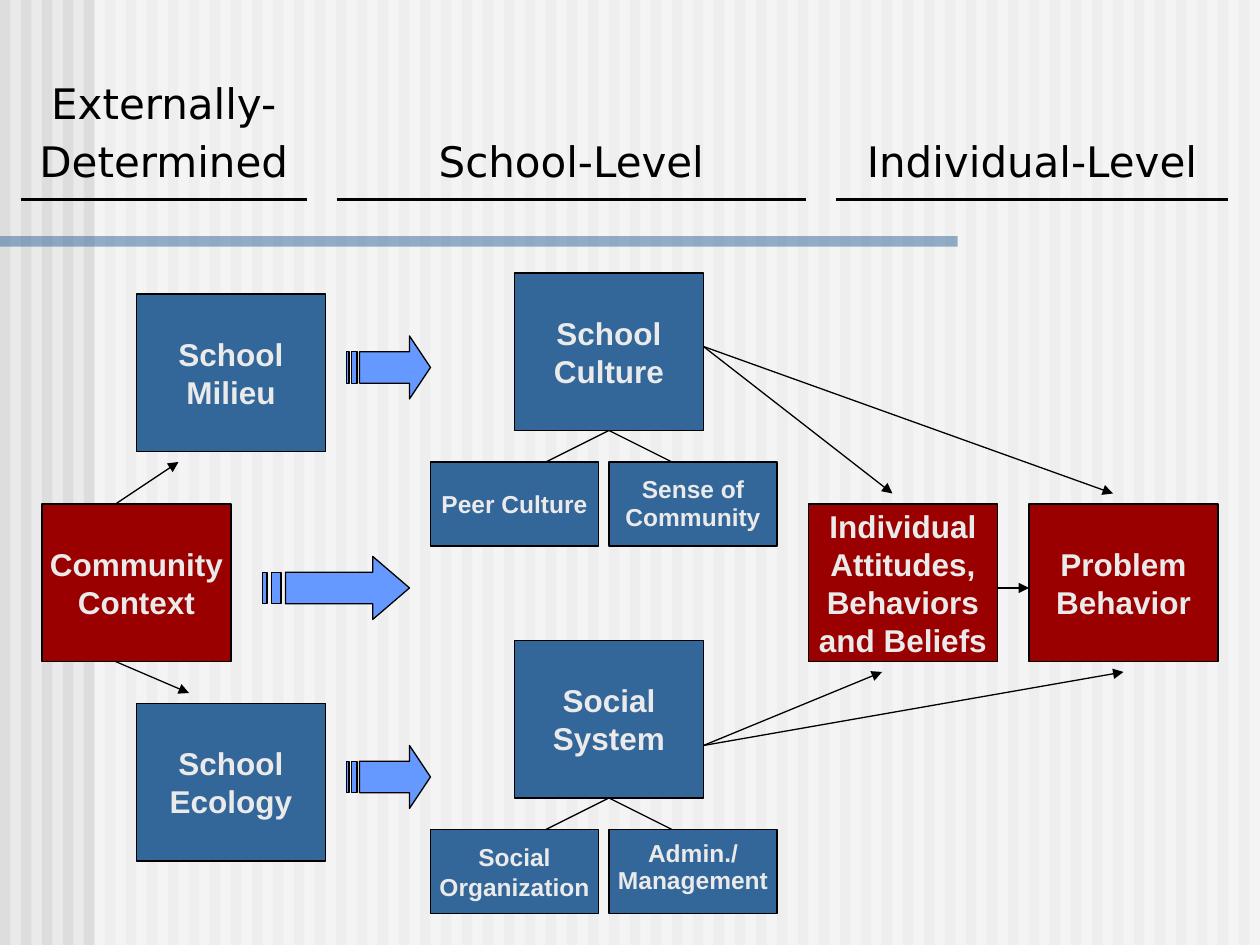
"""Build the school context model slide."""
from lxml import etree
from pptx import Presentation
from pptx import util as u
from pptx.dml.color import RGBColor
from pptx.enum import shapes, text
from pptx.oxml.ns import qn

PX = 7620
COLORS = {
    "background": "EAEAEA", "stripe": "DDDDDD", "veil": "FFFFFF", "blue": "336699",
    "red": "9A0000", "arrow": "6699FF", "line": "000000", "label": "EAEAEA",
}
PLAIN_TABLE = "{2D5ABB26-0587-4C30-8999-92F81FD0307C}"


class Board:
    """Hold the style and the current slide, and draw each kind of element."""

    def __init__(self, slide):
        self.slide = slide
        self.shapes = slide.shapes
        self.font = "Arial"
        self.heading_font = "DejaVu Sans"
        self.width = u.Pt(0.75)
        self.inset = 6 * PX

    def color(self, name):
        return RGBColor.from_string(COLORS[name])

    def background(self, name):
        fill = self.slide.background.fill
        fill.solid()
        fill.fore_color.rgb = self.color(name)

    def paint(self, sp, name, outlined=True):
        sp.shadow.inherit = False
        sp.fill.solid()
        sp.fill.fore_color.rgb = self.color(name)
        if outlined:
            sp.line.color.rgb = self.color("line")
            sp.line.width = self.width
        else:
            sp.line.fill.background()

    def band(self, x, y, w, h, name, alpha=100):
        sp = self.shapes.add_shape(shapes.MSO_SHAPE.RECTANGLE, x * PX, y * PX, w * PX, h * PX)
        self.paint(sp, name, outlined=False)
        if alpha < 100:
            rgb = sp._element.spPr.find(qn("a:solidFill")).find(qn("a:srgbClr"))
            etree.SubElement(rgb, qn("a:alpha"), val=str(alpha * 1000))
        return sp

    def label(self, tf, words, size, font, color, bold=False, before=0, spacing=None):
        tf.text = words
        for p in tf.paragraphs:
            p.alignment = text.PP_ALIGN.CENTER
            p.space_before = u.Pt(before)
            if spacing:
                p.line_spacing = spacing
            for r in p.runs:
                r.font.size = u.Pt(size)
                r.font.name = font
                r.font.bold = bold
                r.font.color.rgb = self.color(color)

    def box(self, words, x, y, w=180, h=150, name="blue", size=18, before=0, spacing=None):
        sp = self.shapes.add_shape(shapes.MSO_SHAPE.RECTANGLE, x * PX, y * PX, w * PX, h * PX)
        self.paint(sp, name)
        tf = sp.text_frame
        tf.word_wrap = True
        tf.vertical_anchor = text.MSO_ANCHOR.MIDDLE
        tf.margin_left = tf.margin_right = tf.margin_top = tf.margin_bottom = self.inset
        self.label(tf, words, size, self.font, "label", True, before, spacing)
        return sp

    def small_box(self, words, x, y, **style):
        return self.box(words, x, y, 160, 80, size=14, **style)

    def line(self, start, end, arrow=True, source=None):
        sp = self.shapes.add_connector(
            shapes.MSO_CONNECTOR.STRAIGHT, *(v * PX for v in (*start, *end)))
        if source is not None:
            sp.begin_connect(source, 2)
        sp.line.color.rgb = self.color("line")
        sp.line.width = self.width
        if arrow:
            ln = sp._element.spPr.find(qn("a:ln"))
            etree.SubElement(ln, qn("a:tailEnd"), type="triangle")
        etree.SubElement(sp._element.spPr, qn("a:effectLst"))

    def striped_arrow(self, x, y, w, h=60):
        def across(part):
            return round((x + w * part / 32) * PX)

        top, upper, middle, lower, bottom = (round((y + h * k / 4) * PX) for k in range(5))
        neck, tip, tail = across(24), across(32), across(5)
        outlines = [[(neck, top), (neck, upper), (tail, upper), (tail, lower),
                     (neck, lower), (neck, bottom), (tip, middle)]]
        for left, right in ((2, 4), (0, 1)):
            a, b = across(left), across(right)
            outlines.append([(a, upper), (a, lower), (b, lower), (b, upper)])
        builder = self.shapes.build_freeform(*outlines[0][0], scale=1.0)
        for i, points in enumerate(outlines):
            if i:
                builder.move_to(*points[0])
            builder.add_line_segments(points[1:], close=True)
        self.paint(builder.convert_to_shape(), "arrow")

    def headings(self, x, y, h, columns):
        total = sum(w for w, _ in columns)
        table = self.shapes.add_table(1, len(columns), x * PX, y * PX, total * PX, h * PX).table
        table.first_row = table.horz_banding = False
        table._tbl.tblPr.find(qn("a:tableStyleId")).text = PLAIN_TABLE
        table.rows[0].height = h * PX
        for i, (w, words) in enumerate(columns):
            table.columns[i].width = w * PX
            cell = table.cell(0, i)
            cell.fill.background()
            if words:
                cell.vertical_anchor = text.MSO_ANCHOR.BOTTOM
                cell.margin_bottom = 2 * self.inset
                self.label(cell.text_frame, words, 24, self.heading_font, "line", before=5)
                self.underline(cell)

    def underline(self, cell):
        ln = etree.Element(qn("a:lnB"), w=str(u.Pt(2.25)))
        fill = etree.SubElement(ln, qn("a:solidFill"))
        etree.SubElement(fill, qn("a:srgbClr"), val=COLORS["line"])
        cell._tc.get_or_add_tcPr().insert(0, ln)


def main():
    prs = Presentation()
    prs.slide_width, prs.slide_height = 1200 * PX, 900 * PX
    s = Board(prs.slides.add_slide(prs.slide_layouts[6]))

    s.background("background")
    for i in range(60):
        s.band(20 * i, 0, 10, 900, "stripe")
    s.band(90, 0, 1110, 900, "veil", 50)
    s.band(0, 225, 912, 10, "blue", 50)

    s.box("School Milieu", 130, 280)
    s.box("School Ecology", 130, 670)
    s.box("Community Context", 40, 480, name="red")
    system = s.box("Social System", 490, 610)
    culture = s.box("School Culture", 490, 260)
    s.box("Problem Behavior", 980, 480, name="red")
    s.box("Individual Attitudes, Behaviors and Beliefs", 770, 480, name="red")
    s.small_box("Social Organization", 410, 790)
    s.small_box("Admin./\nManagement", 580, 790, before=7, spacing=0.5)
    s.small_box("Peer Culture", 410, 440)
    s.small_box("Sense of Community", 580, 440, spacing=0.95)

    for parent, y in ((system, 760), (culture, 410)):
        for x in (520, 640):
            s.line((580, y), (x, y + 30), arrow=False, source=parent)
    for start, end in (
        ((110, 480), (170, 440)), ((110, 630), (180, 660)),
        ((670, 330), (850, 470)), ((670, 330), (1060, 470)),
        ((670, 710), (1070, 640)), ((670, 710), (840, 640)),
        ((950, 560), (980, 560)),
    ):
        s.line(start, end)
    for x, y, w in ((330, 320, 80), (250, 530, 140), (330, 710, 80)):
        s.striped_arrow(x, y, w)

    s.headings(20, 70, 120, [
        (272, "Externally-\nDetermined"), (28, ""), (447, "School-Level"),
        (28, ""), (373, "Individual-Level")])
    prs.save("out.pptx")


if __name__ == "__main__":
    main()
